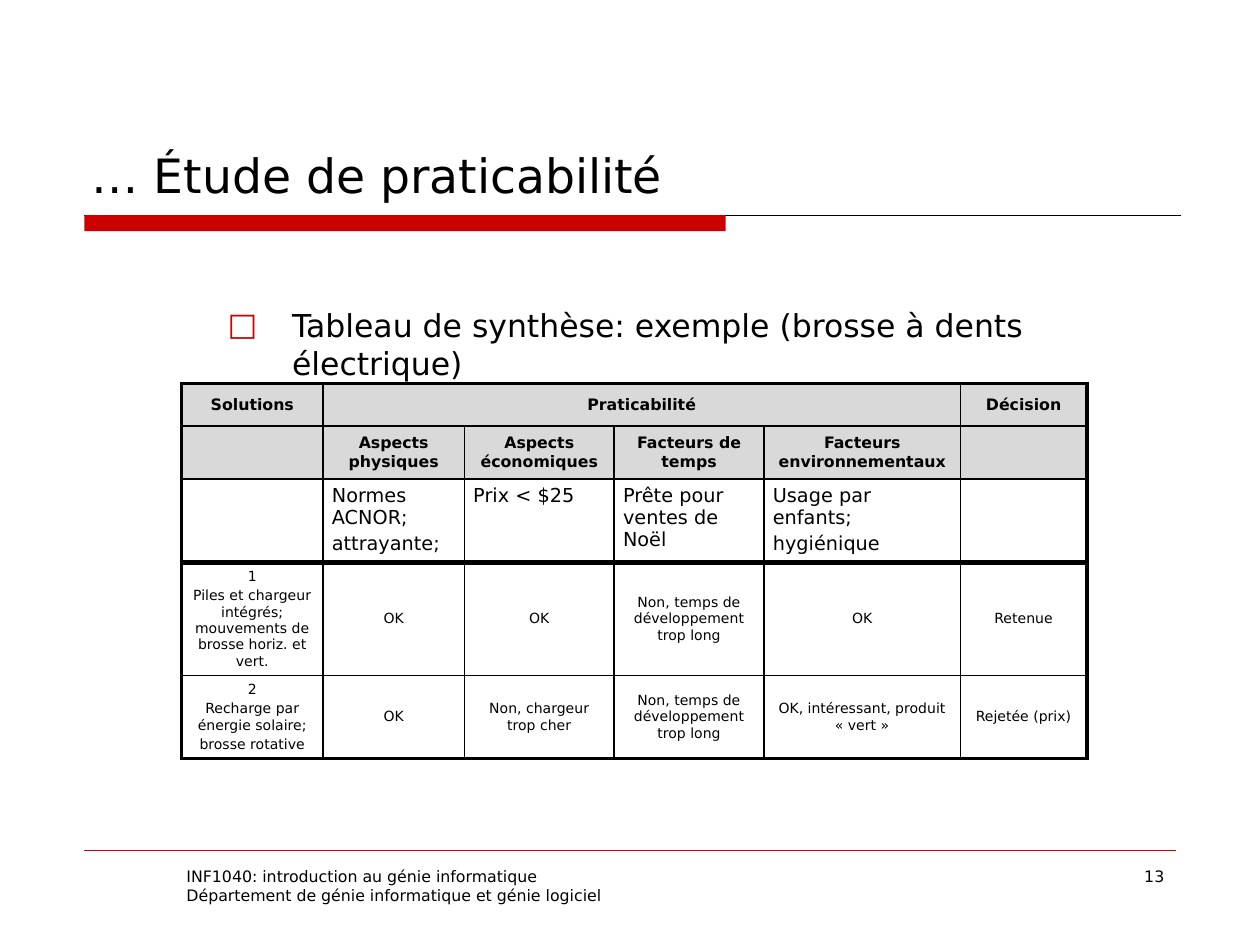
"""Build the feasibility summary slide with its decision table."""
from dataclasses import dataclass
from typing import Any

from lxml.etree import SubElement
from pptx import Presentation
from pptx.dml.color import RGBColor
from pptx.enum.shapes import MSO_CONNECTOR as Connector, MSO_SHAPE as Shape
from pptx.enum.text import MSO_ANCHOR as Anchor, PP_ALIGN as Align
from pptx.oxml.ns import qn
from pptx.util import Cm, Pt


def color(hex_code):
    return RGBColor.from_string(hex_code)


@dataclass
class SlideBuilder:
    slide: Any
    face: str = "DejaVu Sans"
    ink: str = "000000"
    accent: str = "CC0000"
    shade: str = "D9D9D9"

    def fill_text(self, frame, lines, size, bold=False, align=Align.LEFT, gap=0.0, bullet=None):
        frame.word_wrap = True
        for index, line in enumerate(lines):
            paragraph = frame.paragraphs[0] if index == 0 else frame.add_paragraph()
            paragraph.text = line
            paragraph.alignment = align
            if index:
                paragraph.space_before = Pt(round(size * gap, 2))
            if bullet:
                self.add_bullet(paragraph, bullet)
            font = paragraph.font
            font.name, font.size, font.bold = self.face, Pt(size), bold
            font.color.rgb = color(self.ink)

    def add_bullet(self, paragraph, bullet):
        properties = paragraph._p.get_or_add_pPr()
        properties.set("marL", str(Cm(1.3)))
        properties.set("indent", str(Cm(-1.3)))
        tint = SubElement(properties, qn("a:buClr"))
        SubElement(tint, qn("a:srgbClr"), val=self.accent)
        SubElement(properties, qn("a:buFont"), typeface=self.face)
        SubElement(properties, qn("a:buChar"), char=bullet)

    def text(self, left, top, width, height, lines, size, anchor=Anchor.TOP, **style):
        box = self.slide.shapes.add_textbox(Cm(left), Cm(top), Cm(width), Cm(height))
        box.text_frame.vertical_anchor = anchor
        self.fill_text(box.text_frame, lines, size, **style)

    def bar(self, left, top, width, height):
        bar = self.slide.shapes.add_shape(
            Shape.RECTANGLE, Cm(left), Cm(top), Cm(width), Cm(height))
        bar.shadow.inherit = False
        bar.fill.solid()
        bar.fill.fore_color.rgb = color(self.accent)
        bar.line.fill.background()

    def rule(self, left, right, y, weight, tint):
        rule = self.slide.shapes.add_connector(
            Connector.STRAIGHT, Cm(left), Cm(y), Cm(right), Cm(y))
        rule.line.color.rgb = color(tint)
        rule.line.width = Pt(weight)
        SubElement(rule._element.spPr, qn("a:effectLst"))

    def borders(self, cell, weights):
        properties = cell._tc.get_or_add_tcPr()
        for side, weight in weights.items():
            edge = SubElement(properties, qn(f"a:ln{side}"), w=str(Pt(weight)))
            fill = SubElement(edge, qn("a:solidFill"))
            SubElement(fill, qn("a:srgbClr"), val=self.ink)

    def table(self, left, top, widths, heights, rows, row_styles):
        table = self.slide.shapes.add_table(
            len(heights), len(widths), Cm(left), Cm(top),
            Cm(sum(widths)), Cm(sum(heights))).table
        table.first_row = table.horz_banding = False
        for column, width in zip(table.columns, widths):
            column.width = Cm(width)
        outer, inner, divider = 2.25, 1, 3
        row_edges = [outer, inner, inner, divider, inner, outer]
        column_edges = [outer] + [inner] * (len(widths) - 1) + [outer]
        for r, (texts, style) in enumerate(zip(rows, row_styles)):
            table.rows[r].height = Cm(heights[r])
            for c, content in enumerate(texts):
                cell = table.cell(r, c)
                self.borders(cell, {"L": column_edges[c], "R": column_edges[c + 1],
                                    "T": row_edges[r], "B": row_edges[r + 1]})
                if style["bold"]:
                    cell.fill.solid()
                    cell.fill.fore_color.rgb = color(self.shade)
                else:
                    cell.fill.background()
                cell.margin_left = cell.margin_right = Cm(0.18)
                cell.margin_top = cell.margin_bottom = Cm(0.1)
                centred = style["align"] == Align.CENTER
                cell.vertical_anchor = Anchor.MIDDLE if centred else Anchor.TOP
                self.fill_text(cell.text_frame, content.split("\n"), gap=0.2, **style)
        return table


def main():
    deck = Presentation()
    deck.slide_width, deck.slide_height = Cm(25.4), Cm(19.05)
    page = SlideBuilder(deck.slides.add_slide(deck.slide_layouts[6]))

    page.rule(1.7, 23.8, 4.34, 0.75, page.ink)
    page.bar(1.7, 4.34, 12.93, 0.32)
    page.rule(1.7, 23.7, 17.15, 0.25, page.accent)
    page.text(3.51, 17.35, 13.23, 1.27,
              ["INF1040: introduction au génie informatique",
               "Département de génie informatique et génie logiciel"], 9)

    heading = {"size": 9, "bold": True, "align": Align.CENTER}
    criterion = {"size": 11, "bold": False, "align": Align.LEFT}
    verdict = {"size": 8, "bold": False, "align": Align.CENTER}
    too_long = "Non, temps de développement trop long"
    solutions = [
        ["Solutions", "Praticabilité", "", "", "", "Décision"],
        ["", "Aspects physiques", "Aspects économiques", "Facteurs de temps",
         "Facteurs environnementaux", ""],
        ["", "Normes ACNOR;\nattrayante;", "Prix < $25", "Prête pour ventes de Noël",
         "Usage par enfants;\nhygiénique", ""],
        ["1\nPiles et chargeur intégrés; mouvements de brosse horiz. et vert.",
         "OK", "OK", too_long, "OK", "Retenue"],
        ["2\nRecharge par énergie solaire;\nbrosse rotative", "OK",
         "Non, chargeur trop cher", too_long,
         "OK, intéressant, produit « vert »", "Rejetée (prix)"],
    ]
    synthesis = page.table(
        3.66, 7.73, [2.85, 2.85, 3.02, 3.02, 3.96, 2.55], [0.86, 1.07, 1.62, 2.23, 1.6],
        solutions, [heading, heading, criterion, verdict, verdict])
    synthesis.cell(0, 1).merge(synthesis.cell(0, 4))

    page.text(4.34, 6.05, 16.66, 0.79,
              ["Tableau de synthèse: exemple (brosse à dents électrique)"], 18, bullet="□")
    page.text(1.6, 0.84, 22.23, 3.38, ["… Étude de praticabilité"], 27, anchor=Anchor.BOTTOM)
    page.text(18.21, 17.35, 5.51, 1.32, ["13"], 9, align=Align.RIGHT)

    deck.save("out.pptx")


if __name__ == "__main__":
    main()
